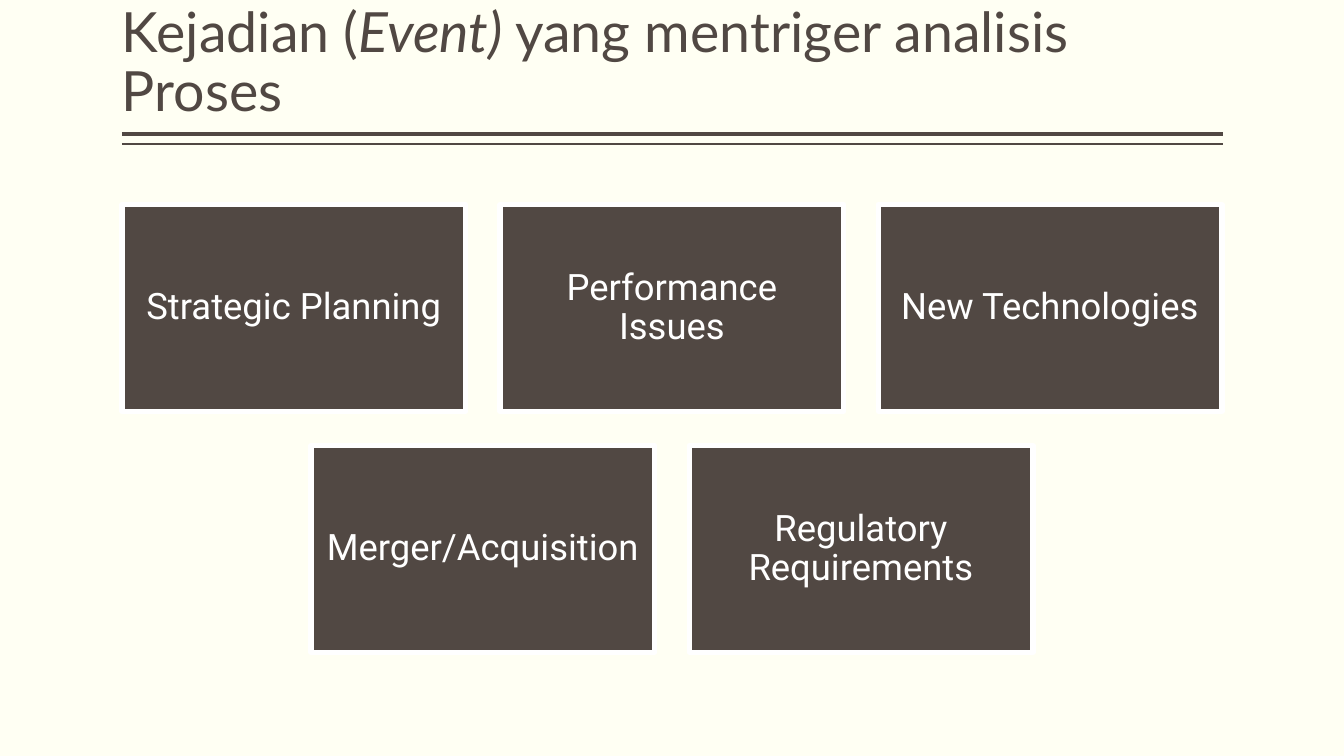
from lxml import etree
from pptx import Presentation
from pptx.dml.color import RGBColor
from pptx.enum.shapes import MSO_CONNECTOR, MSO_SHAPE
from pptx.enum.text import MSO_ANCHOR, MSO_AUTO_SIZE, PP_ALIGN
from pptx.oxml.ns import qn
from pptx.util import Inches, Pt

STRAIGHT = MSO_CONNECTOR.STRAIGHT
RECTANGLE = MSO_SHAPE.RECTANGLE
BOTTOM, MIDDLE = MSO_ANCHOR.BOTTOM, MSO_ANCHOR.MIDDLE
LEFT, CENTER = PP_ALIGN.LEFT, PP_ALIGN.CENTER
NO_AUTOFIT = MSO_AUTO_SIZE.NONE

TITLE = [("Kejadian (", False), ("Event)", True), (" yang mentriger analisis Proses", False)]
EVENT_ROWS = [
    ["Strategic Planning", "Performance Issues", "New Technologies"],
    ["Merger/Acquisition", "Regulatory Requirements"],
]
RULES = [(1.33, 3), (1.43, 1)]  # height on the slide, line width

COLORS = {"background": "FFFFF3", "brown": "514843", "white": "FFFFFF"}
SLIDE_W, SLIDE_H = 13.33, 7.5
MARGIN, CONTENT_W = 1.21, 10.92
CARD_W, CARD_H = 3.41, 2.05
CARDS_TOP, GAP = 2.03, 0.34

TITLE_FRAME = {
    "margin_left": 0, "margin_right": 0,
    "margin_top": Inches(0.05), "margin_bottom": Inches(0.05),
    "vertical_anchor": BOTTOM, "word_wrap": True, "auto_size": NO_AUTOFIT,
}
CARD_FRAME = {
    "margin_left": Inches(0.11), "margin_right": Inches(0.11),
    "margin_top": Inches(0.11), "margin_bottom": Inches(0.11),
    "vertical_anchor": MIDDLE, "word_wrap": True,
}
TITLE_FONT = {"name": "Lato", "size": Pt(39.6), "bold": False}
CARD_FONT = {"name": "Roboto", "size": Pt(26)}


def color(name):
    return RGBColor.from_string(COLORS[name])


def apply(target, values):
    for attribute, value in values.items():
        setattr(target, attribute, value)


def write(shape, runs, frame_format, font_format, font_color, alignment):
    """Fill a shape with one paragraph of (text, italic) runs."""
    frame = shape.text_frame
    apply(frame, frame_format)
    paragraph = frame.paragraphs[0]
    apply(paragraph, {"alignment": alignment, "line_spacing": 0.9, "space_before": Pt(0)})
    for text, italic in runs:
        run = paragraph.add_run()
        run.text = text
        apply(run.font, {**font_format, "italic": italic})
        run.font.color.rgb = color(font_color)


def add_rule(slide, y, width):
    rule = slide.shapes.add_connector(
        STRAIGHT, Inches(MARGIN), Inches(y), Inches(MARGIN + CONTENT_W), Inches(y))
    rule.line.color.rgb = color("brown")
    rule.line.width = Pt(width)
    etree.SubElement(rule.line._get_or_add_ln().getparent(), qn("a:effectLst"))


def add_card(slide, event, x, y):
    card = slide.shapes.add_shape(
        RECTANGLE, Inches(x), Inches(y), Inches(CARD_W), Inches(CARD_H))
    card.shadow.inherit = False
    card.fill.solid()
    card.fill.fore_color.rgb = color("brown")
    card.line.color.rgb = color("white")
    card.line.width = Pt(3.78)
    write(card, [(event, False)], CARD_FRAME, CARD_FONT, "white", CENTER)


def main():
    deck = Presentation()
    deck.slide_width, deck.slide_height = Inches(SLIDE_W), Inches(SLIDE_H)
    slide = deck.slides.add_slide(deck.slide_layouts[5])
    slide.background.fill.solid()
    slide.background.fill.fore_color.rgb = color("background")

    for y, width in RULES:
        add_rule(slide, y, width)

    title = slide.shapes.title
    apply(title, {"left": Inches(MARGIN), "top": Inches(0.08),
                  "width": Inches(CONTENT_W), "height": Inches(1.2)})
    write(title, TITLE, TITLE_FRAME, TITLE_FONT, "brown", LEFT)

    for row, events in enumerate(EVENT_ROWS):
        row_width = len(events) * (CARD_W + GAP) - GAP
        row_left = (SLIDE_W - row_width) / 2
        for column, event in enumerate(events):
            add_card(slide, event, row_left + column * (CARD_W + GAP),
                     CARDS_TOP + row * (CARD_H + GAP))

    deck.save("out.pptx")


if __name__ == "__main__":
    main()
